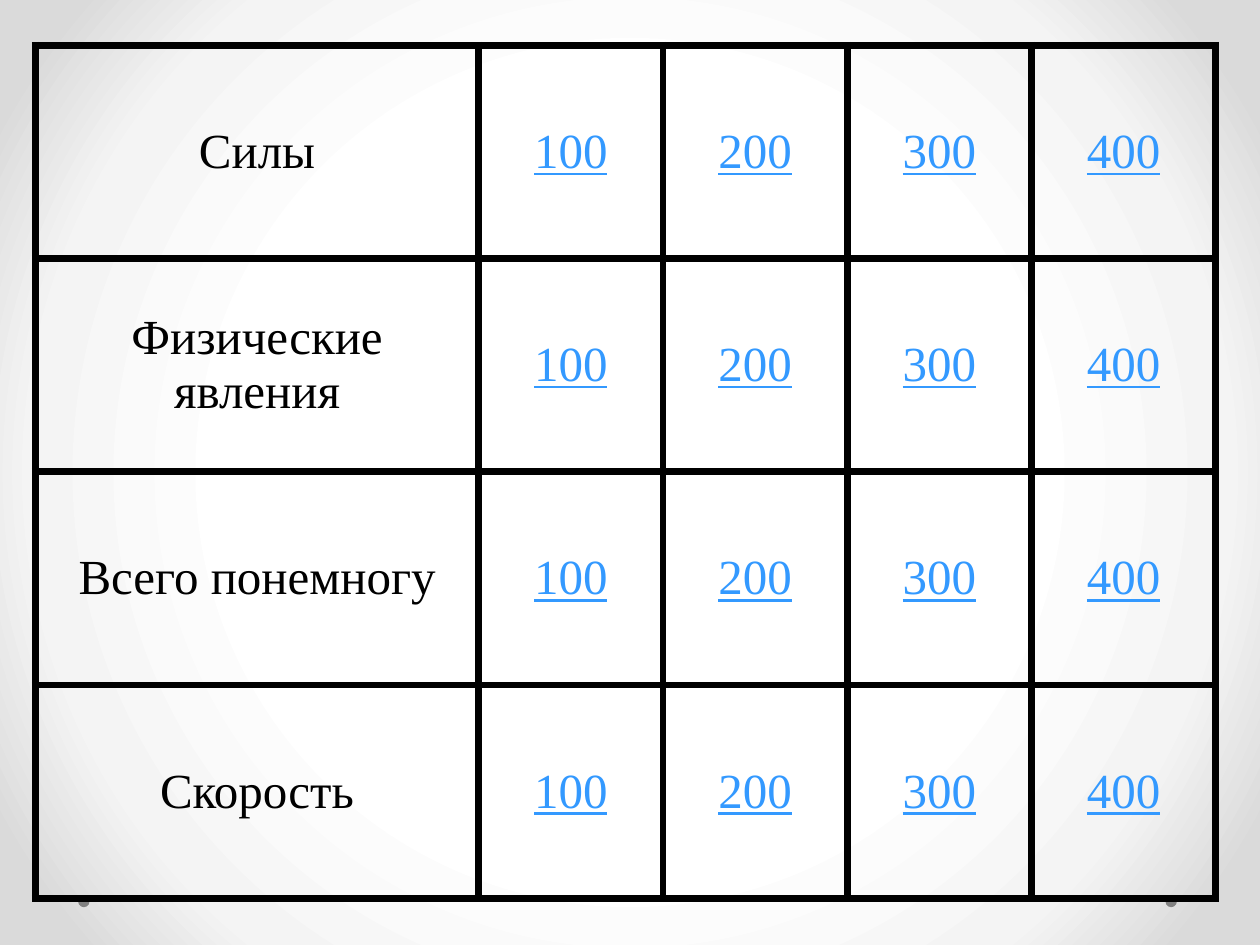
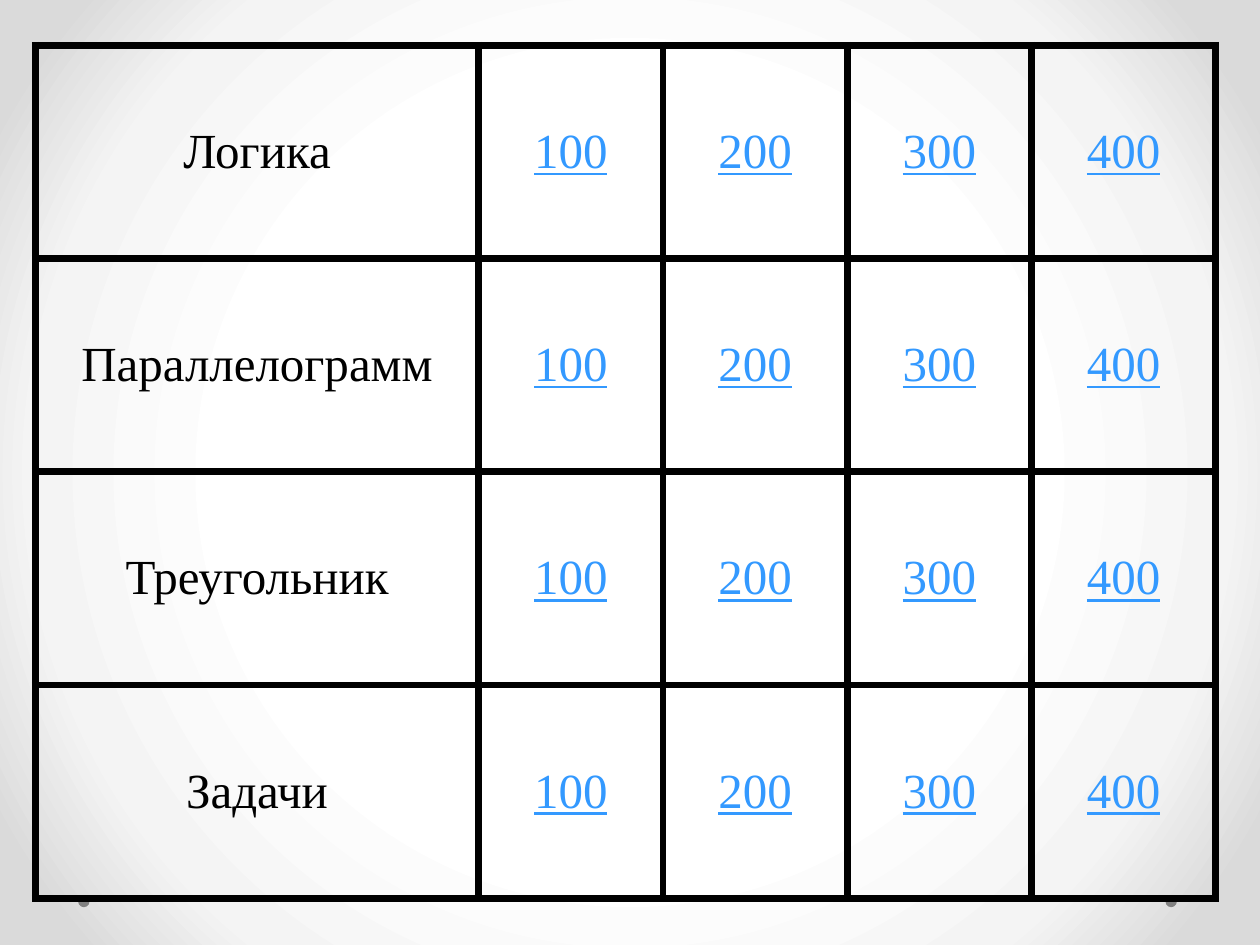
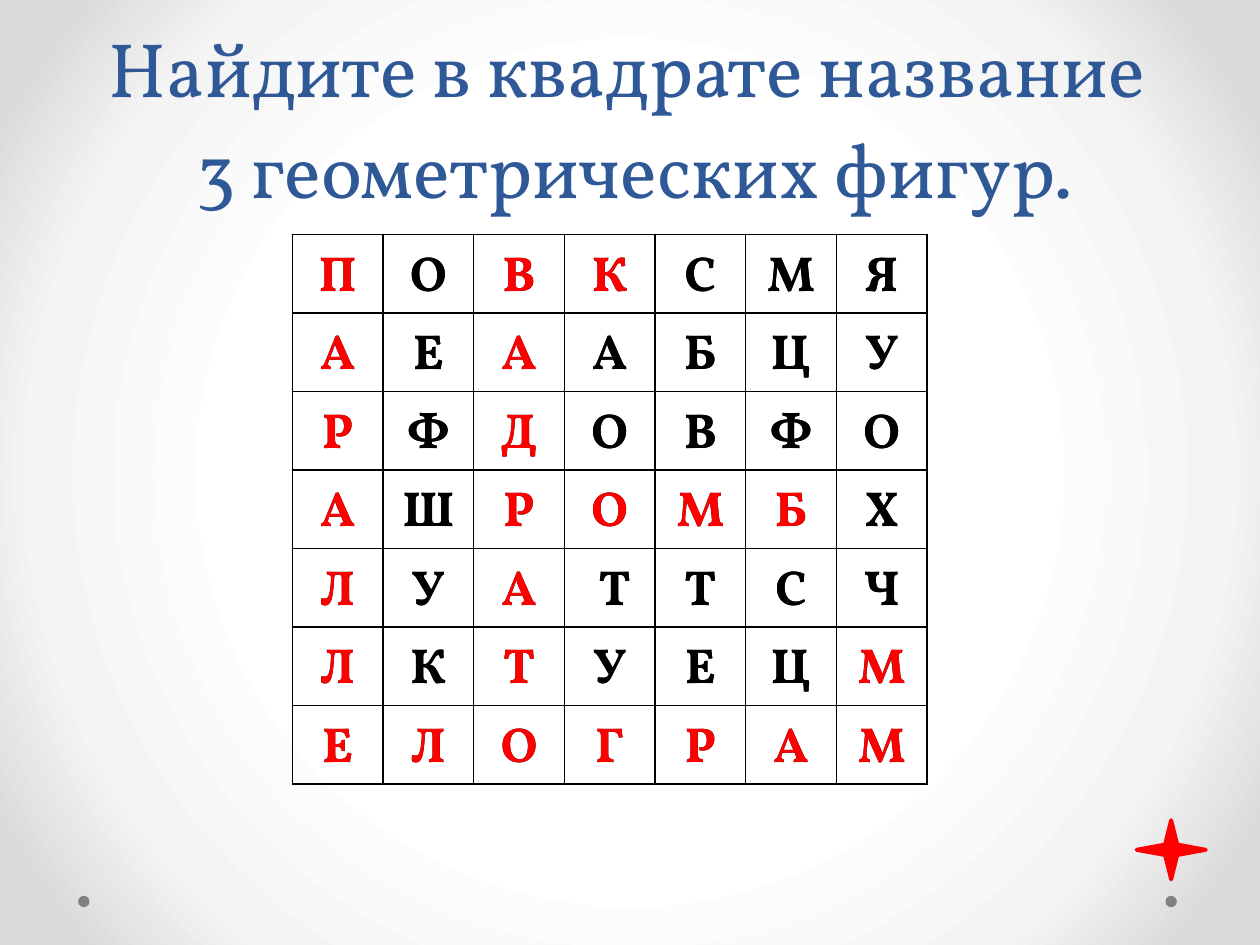
import pptx
import pptx.dml.color
import pptx.enum.shapes
import pptx.enum.text
import pptx.oxml
import pptx.oxml.ns
import pptx.util
from dataclasses import dataclass

Inches = pptx.util.Inches
Pt = pptx.util.Pt
SHAPE = pptx.enum.shapes.MSO_SHAPE
MIDDLE = pptx.enum.text.MSO_ANCHOR.MIDDLE
CENTER = pptx.enum.text.PP_ALIGN.CENTER


@dataclass(frozen=True)
class Theme:
    ink: str = "000000"
    link: str = "3399FF"
    answer: str = "FF0000"
    title: str = "2F5897"
    dot: str = "808080"
    backdrop: tuple = ((50, "FFFFFF"), (76, "F4F4F4"), (92, "DADADA"))
    board_font: str = "Times New Roman"
    puzzle_font: str = "Vollkorn"
    cell_size: int = 28
    title_size: int = 44
    title_leading: int = 58


T = Theme()
TITLE_ONLY, BLANK = 5, 6

BOARDS = [
    ["Силы", "Физические явления", "Всего понемногу", "Скорость"],
    ["Логика", "Параллелограмм", "Треугольник", "Задачи"],
]
POINTS = ["100", "200", "300", "400"]
BOARD_BOX = (0.28, 0.36, 9.37, 6.77)

LETTERS = [row.split(",") for row in (
    "П,О,В,К,С,М,Я",
    "А,Е,А,А,Б,Ц,У",
    "Р,Ф,Д,О,В,Ф,О",
    "А,Ш,Р,О,М,Б,Х",
    "Л,У,А, Т,Т,С,Ч",
    "Л,К,Т,У,Е,Ц,М",
    "Е,Л,О,Г,Р,А,М",
)]
PUZZLE_BOX = (2.32, 1.86, 5.04, 4.09)

# Cells (row, column) of the hidden words
PARALLELOGRAM = {(r, 0) for r in range(7)} | {(6, c) for c in range(7)} | {(5, 6)}
SQUARE = {(0, 3)} | {(r, 2) for r in range(6)}
RHOMBUS = {(3, c) for c in range(2, 6)}
ANSWERS = PARALLELOGRAM | SQUARE | RHOMBUS


def rgb(value):
    return pptx.dml.color.RGBColor.from_string(value)


def xml(text):
    return pptx.oxml.parse_xml(text.replace(">", f" {pptx.oxml.ns.nsdecls('a')}>", 1))


def style(p, font, size, color, bold=False, underline=False):
    p.alignment = CENTER
    p.font.name = font
    p.font.size = Pt(size)
    p.font.color.rgb = rgb(color)
    p.font.bold = bold
    p.font.underline = underline


def add_figure(s, kind, box, color):
    sp = s.shapes.add_shape(kind, *map(Inches, box))
    sp.shadow.inherit = False
    sp.fill.solid()
    sp.fill.fore_color.rgb = rgb(color)
    sp.line.fill.background()
    return sp


def add_grid(s, box, texts, widths, border):
    """Add a plain table with equal rows; yield row, column, cell, paragraph."""
    table = s.shapes.add_table(len(texts), len(widths), *map(Inches, box)).table
    table.first_row = table.horz_banding = False
    for column, width in zip(table.columns, widths):
        column.width = Inches(width)
    for r, row in enumerate(texts):
        table.rows[r].height = Inches(box[3] / len(texts))
        for c, text in enumerate(row):
            cell = table.cell(r, c)
            cell.text = text
            cell.vertical_anchor = MIDDLE
            for side in ("lnL", "lnR", "lnT", "lnB"):
                cell._tc.get_or_add_tcPr().append(xml(
                    f'<a:{side} w="{Pt(border)}"><a:solidFill><a:srgbClr val="{T.ink}"/>'
                    f'</a:solidFill></a:{side}>'))
            cell.fill.background()
            yield r, c, cell, cell.text_frame.paragraphs[0]


def set_master(prs, s):
    """Give the master its round gradient and the two bottom dots."""
    master = prs.slide_master
    fill = master.background.fill
    fill.solid()
    solid = master.element.find(".//" + pptx.oxml.ns.qn("p:bgPr"))[0]
    stops = "".join(f'<a:gs pos="{pos * 1000}"><a:srgbClr val="{color}"/></a:gs>'
                    for pos, color in T.backdrop)
    solid.getparent().replace(solid, xml(
        f'<a:gradFill rotWithShape="1"><a:gsLst>{stops}</a:gsLst><a:path path="circle">'
        '<a:fillToRect l="50000" t="50000" r="50000" b="50000"/></a:path></a:gradFill>'))
    for left in (9.25, 0.62):
        dot = add_figure(s, SHAPE.OVAL, (left, 7.11, 0.09, 0.09), T.dot)
        master.shapes.element.append(dot.element)


def add_board(s, box, topics):
    """Quiz board: a topic and its point values in every row."""
    topic_width = 3.52
    widths = [topic_width] + [(box[2] - topic_width) / len(POINTS)] * len(POINTS)
    texts = [[topic, *POINTS] for topic in topics]
    for r, c, cell, p in add_grid(s, box, texts, widths, 4.5):
        style(p, T.board_font, T.cell_size, T.link if c else T.ink, underline=c > 0)


def add_puzzle(s, box, marked):
    """Letter square with the marked cells in the answer colour."""
    widths = [box[2] / len(LETTERS[0])] * len(LETTERS[0])
    for r, c, cell, p in add_grid(s, box, LETTERS, widths, 1):
        cell.margin_left = cell.margin_right = Inches(0.07)
        cell.margin_top = cell.margin_bottom = 0
        style(p, T.puzzle_font, T.cell_size,
              T.answer if (r, c) in marked else T.ink, bold=True)
        p.line_spacing = 1.15


def add_title(s, box, text):
    sp = s.shapes.title
    sp.left, sp.top, sp.width, sp.height = map(Inches, box)
    tf = sp.text_frame
    tf.text = text
    tf.auto_size = pptx.enum.text.MSO_AUTO_SIZE.NONE
    tf.vertical_anchor = pptx.enum.text.MSO_ANCHOR.BOTTOM
    p = tf.paragraphs[0]
    style(p, T.puzzle_font, T.title_size, T.title)
    p.line_spacing = Pt(T.title_leading)


def add_star(s, box):
    star = add_figure(s, SHAPE.STAR_4_POINT, box, T.answer)
    star.line.color.rgb = rgb(T.answer)
    star.line.width = Pt(2.25)


def main():
    prs = pptx.Presentation()
    prs.slide_width, prs.slide_height = Inches(10), Inches(7.5)

    # Quiz boards
    for topics in BOARDS:
        s = prs.slides.add_slide(prs.slide_layouts[BLANK])
        add_board(s, BOARD_BOX, topics)

    # Letter square, plain and then with its answers on top
    s = prs.slides.add_slide(prs.slide_layouts[TITLE_ONLY])
    set_master(prs, s)
    add_title(s, (0.54, 0.13, 9, 1.62),
              "Найдите в квадрате название \v3 геометрических фигур.")
    add_star(s, (9.02, 6.51, 0.55, 0.47))
    for marked in (set(), ANSWERS):
        add_puzzle(s, PUZZLE_BOX, marked)

    prs.save("out.pptx")


if __name__ == "__main__":
    main()
